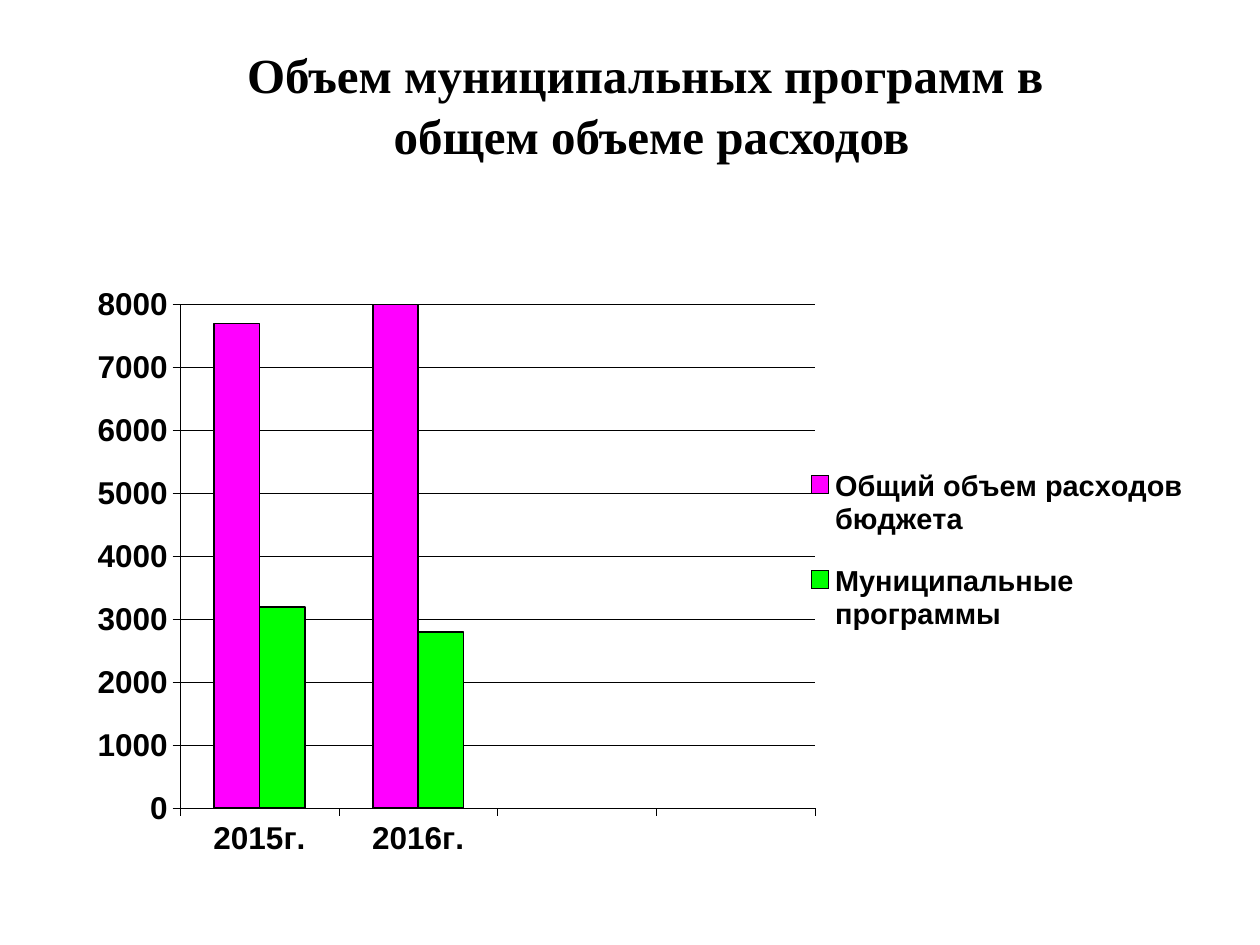
from dataclasses import dataclass

from lxml.etree import SubElement
from pptx import Presentation
from pptx.chart.data import CategoryChartData
from pptx.dml.color import RGBColor
from pptx.enum.chart import XL_CHART_TYPE as ChartType
from pptx.enum.chart import XL_LEGEND_POSITION as LegendPosition
from pptx.enum.chart import XL_TICK_MARK as TickMark
from pptx.enum.text import MSO_ANCHOR as Anchor
from pptx.enum.text import PP_ALIGN as Align
from pptx.oxml import parse_xml
from pptx.oxml.ns import nsdecls, qn
from pptx.util import Pt

BLACK = "000000"
TITLE_LINES = ["Объем муниципальных программ в ", "общем объеме расходов"]
CATEGORIES = ["2015г.", "2016г.", "", ""]


@dataclass
class Series:
    name: str
    values: list
    color: str


@dataclass
class Layout:
    x: float
    y: float
    w: float
    h: float


SERIES = [
    Series("Общий объем расходов бюджета", [7700, 8000, None, None], "FF00FF"),
    Series("Муниципальные программы", [3200, 2800, None, None], "00FF00"),
]
PLOT_LAYOUT = Layout(0.089, 0.047, 0.568, 0.826)
LEGEND_LAYOUT = Layout(0.65, 0.27, 0.34, 0.36)


def rgb(color: str) -> RGBColor:
    return RGBColor.from_string(color)


def style_font(font, size: float, name: str) -> None:
    font.size = Pt(size)
    font.name = name
    font.bold = True
    font.color.rgb = rgb(BLACK)


def style_line(line, width: float) -> None:
    line.color.rgb = rgb(BLACK)
    line.width = Pt(width)


def make_layout(layout: Layout, inner: bool):
    element = parse_xml(f"<c:layout {nsdecls('c')}/>")
    manual = SubElement(element, qn("c:manualLayout"))
    settings = [("layoutTarget", "inner")] if inner else []
    settings += [("xMode", "edge"), ("yMode", "edge")]
    settings += [(key, str(getattr(layout, key))) for key in "xywh"]
    for tag, value in settings:
        SubElement(manual, qn(f"c:{tag}")).set("val", value)
    return element


def add_title(page) -> None:
    box = page.shapes.add_textbox(Pt(48.24), Pt(18), Pt(648), Pt(90))
    frame = box.text_frame
    frame.word_wrap = True
    frame.vertical_anchor = Anchor.TOP
    frame.margin_top = Pt(7.2)
    for index, line in enumerate(TITLE_LINES):
        para = frame.add_paragraph() if index else frame.paragraphs[0]
        para.alignment = Align.CENTER
        para.space_before = Pt(1.5 if index else 0)
        span = para.add_run()
        span.text = line
        style_font(span.font, 28, "Times New Roman")


def style_axis(axis) -> None:
    axis.major_tick_mark = TickMark.OUTSIDE
    axis.minor_tick_mark = TickMark.NONE
    style_font(axis.tick_labels.font, 18, "Arial")
    style_line(axis.format.line, 0.25)


def add_chart(page) -> None:
    data = CategoryChartData()
    data.categories = CATEGORIES
    for series in SERIES:
        data.add_series(series.name, series.values)
    chart = page.shapes.add_chart(
        ChartType.COLUMN_CLUSTERED, Pt(46.08), Pt(157.68), Pt(638.64), Pt(348.48), data
    ).chart
    chart.has_title = False
    style_font(chart.font, 18, "Arial")

    plot = chart.plots[0]
    plot.gap_width = 150
    plot.overlap = 0
    plot.vary_by_categories = False
    for column, series in zip(plot.series, SERIES):
        column.format.fill.solid()
        column.format.fill.fore_color.rgb = rgb(series.color)
        style_line(column.format.line, 1)

    for axis in (chart.category_axis, chart.value_axis):
        style_axis(axis)
    values = chart.value_axis
    values.minimum_scale, values.maximum_scale, values.major_unit = 0, 8000, 1000
    style_line(values.major_gridlines.format.line, 0.25)

    chart.has_legend = True
    chart.legend.position = LegendPosition.RIGHT
    chart.legend.include_in_layout = False
    style_font(chart.legend.font, 16.5, "Arial")

    root = chart.element
    area = root.find(f".//{qn('c:plotArea')}")
    for old in area.findall(qn("c:layout")):
        area.remove(old)
    area.insert(0, make_layout(PLOT_LAYOUT, True))
    legend = root.find(f".//{qn('c:legend')}")
    for old in legend.findall(qn("c:layout")):
        legend.remove(old)
    legend.find(qn("c:legendPos")).addnext(make_layout(LEGEND_LAYOUT, False))


def main() -> None:
    deck = Presentation()
    deck.slide_width, deck.slide_height = Pt(720), Pt(540)
    page = deck.slides.add_slide(deck.slide_layouts[6])
    page.background.fill.solid()
    page.background.fill.fore_color.rgb = rgb("FFFFFF")
    add_title(page)
    add_chart(page)
    deck.save("out.pptx")


if __name__ == "__main__":
    main()
